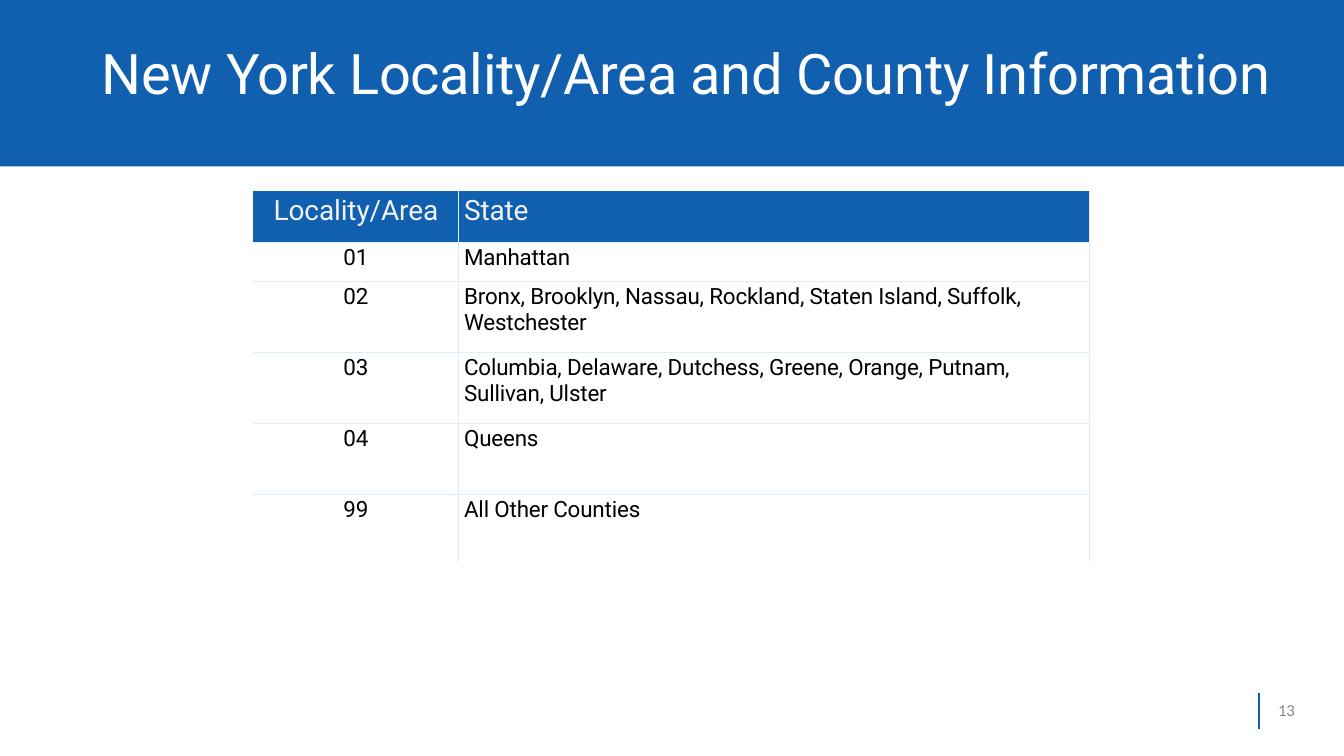
from dataclasses import dataclass

from lxml.etree import SubElement
from pptx import Presentation
from pptx.dml.color import RGBColor
from pptx.enum.shapes import MSO_CONNECTOR as Connector, MSO_SHAPE as Preset
from pptx.enum.text import MSO_ANCHOR as Anchor, MSO_AUTO_SIZE as AutoSize, PP_ALIGN as Align
from pptx.oxml.ns import qn
from pptx.slide import Slide
from pptx.table import _Cell as Cell
from pptx.text.text import TextFrame
from pptx.util import Inches, Length, Pt

SLIDE_WIDTH, SLIDE_HEIGHT = Inches(13.33), Inches(7.5)
TITLE_ONLY = 5


@dataclass(frozen=True)
class TextStyle:
    size: int
    color: str
    font: str = "Roboto"
    tracking: int = -10  # hundredths of a point
    line_points: float | None = None


@dataclass(frozen=True)
class Theme:
    blue: str = "115FAF"
    rule: str = "DFECF9"
    rule_width: float = 1
    divider_width: float = 1.25
    title: TextStyle = TextStyle(40, "FFFFFF", tracking=-22, line_points=43.2)
    header: TextStyle = TextStyle(20, "F1F1F1")
    body: TextStyle = TextStyle(16, "000000")
    page: TextStyle = TextStyle(12, "888888", "Calibri", -20, 12.4)


@dataclass(frozen=True)
class Box:
    """A frame in percent of the slide's width and height."""
    left: float
    top: float
    width: float
    height: float

    def lengths(self) -> tuple[Length, Length, Length, Length]:
        return across(self.left), down(self.top), across(self.width), down(self.height)


@dataclass(frozen=True)
class Locality:
    code: str
    counties: str
    height: float = 9.4


THEME = Theme()
BAND = Box(0, 0, 100, 22)
TITLE = Box(7.58, 4.53, 88.3, 18.27)
PAGE = Box(95.1, 92.93, 2.4, 2.53)
DIVIDER = Box(93.7, 91.73, 0, 4.67)
TABLE_LEFT, TABLE_TOP = 18.83, 25.33
COLUMN_WIDTHS = (15.3, 46.96)
ROWS = (
    Locality("Locality/Area", "State", 6.75),
    Locality("01", "Manhattan", 5.2),
    Locality("02", "Bronx, Brooklyn, Nassau, Rockland, Staten Island, Suffolk, Westchester"),
    Locality("03", "Columbia, Delaware, Dutchess, Greene, Orange, Putnam, Sullivan, Ulster"),
    Locality("04", "Queens"),
    Locality("99", "All Other Counties", 8.93),
)


def across(percent: float) -> Length:
    return Length(round(SLIDE_WIDTH * percent / 100))


def down(percent: float) -> Length:
    return Length(round(SLIDE_HEIGHT * percent / 100))


def write(frame: TextFrame, text: str, style: TextStyle, align: Align = Align.LEFT) -> None:
    frame.text = text
    frame.word_wrap = True
    paragraph = frame.paragraphs[0]
    paragraph.alignment = align
    paragraph.space_before = Pt(0)
    if style.line_points:
        paragraph.line_spacing = Pt(style.line_points)
    for run in paragraph.runs:
        run.font.name = style.font
        run.font.size = Pt(style.size)
        run.font.bold = False
        run.font.color.rgb = RGBColor.from_string(style.color)
        run.font._element.set("spc", str(style.tracking))


def set_insets(frame: TextFrame, top: float = 0) -> None:
    frame.margin_left = frame.margin_right = frame.margin_bottom = 0
    frame.margin_top = down(top)
    frame.vertical_anchor = Anchor.TOP
    frame.auto_size = AutoSize.NONE


def add_heading(slide: Slide) -> None:
    title = slide.shapes.title
    title.left, title.top, title.width, title.height = TITLE.lengths()
    set_insets(title.text_frame, top=1.4)
    write(title.text_frame, "New York Locality/Area and County Information", THEME.title)

    # Blue band, behind the title
    band = slide.shapes.add_shape(Preset.RECTANGLE, *BAND.lengths())
    band.shadow.inherit = False
    band.fill.solid()
    band.fill.fore_color.rgb = RGBColor.from_string(THEME.blue)
    band.line.fill.background()
    title.element.addprevious(band.element)


def add_page_number(slide: Slide) -> None:
    left, top, width, height = DIVIDER.lengths()
    divider = slide.shapes.add_connector(
        Connector.STRAIGHT, left, top, left + width, top + height)
    divider.line.color.rgb = RGBColor.from_string(THEME.blue)
    divider.line.width = Pt(THEME.divider_width)
    SubElement(divider.element.spPr, qn("a:effectLst"))

    page = slide.shapes.add_textbox(*PAGE.lengths())
    set_insets(page.text_frame)
    write(page.text_frame, "13", THEME.page)


def set_borders(cell: Cell, visible: dict[str, bool]) -> None:
    properties = cell._tc.get_or_add_tcPr()
    for side, shown in visible.items():
        line = SubElement(properties, qn(f"a:ln{side}"), w=str(Pt(THEME.rule_width)))
        if shown:
            fill = SubElement(line, qn("a:solidFill"))
            SubElement(fill, qn("a:srgbClr"), val=THEME.rule)
        else:
            SubElement(line, qn("a:noFill"))


def add_locality_table(slide: Slide) -> None:
    frame = Box(TABLE_LEFT, TABLE_TOP, sum(COLUMN_WIDTHS), sum(row.height for row in ROWS))
    table = slide.shapes.add_table(len(ROWS), len(COLUMN_WIDTHS), *frame.lengths()).table
    table.first_row = table.horz_banding = False
    for column, width in zip(table.columns, COLUMN_WIDTHS):
        column.width = across(width)

    for row_index, locality in enumerate(ROWS):
        is_header = row_index == 0
        table.rows[row_index].height = down(locality.height)
        for column_index, text in enumerate((locality.code, locality.counties)):
            cell = table.cell(row_index, column_index)
            is_code = column_index == 0
            # Rules run between cells and along the right edge
            set_borders(cell, {"L": not is_code, "R": True, "T": not is_header,
                               "B": row_index < len(ROWS) - 1})
            if is_header:
                cell.fill.solid()
                cell.fill.fore_color.rgb = RGBColor.from_string(THEME.blue)
            else:
                cell.fill.background()
            cell.margin_left = across(0 if is_code else 0.4)
            cell.margin_right = cell.margin_bottom = 0
            cell.margin_top = down(0.4 if is_header else 0.27)
            cell.vertical_anchor = Anchor.TOP
            write(cell.text_frame, text, THEME.header if is_header else THEME.body,
                  Align.CENTER if is_code else Align.LEFT)


def main() -> None:
    presentation = Presentation()
    presentation.slide_width, presentation.slide_height = SLIDE_WIDTH, SLIDE_HEIGHT
    slide = presentation.slides.add_slide(presentation.slide_layouts[TITLE_ONLY])
    add_heading(slide)
    add_locality_table(slide)
    add_page_number(slide)
    presentation.save("out.pptx")


if __name__ == "__main__":
    main()
